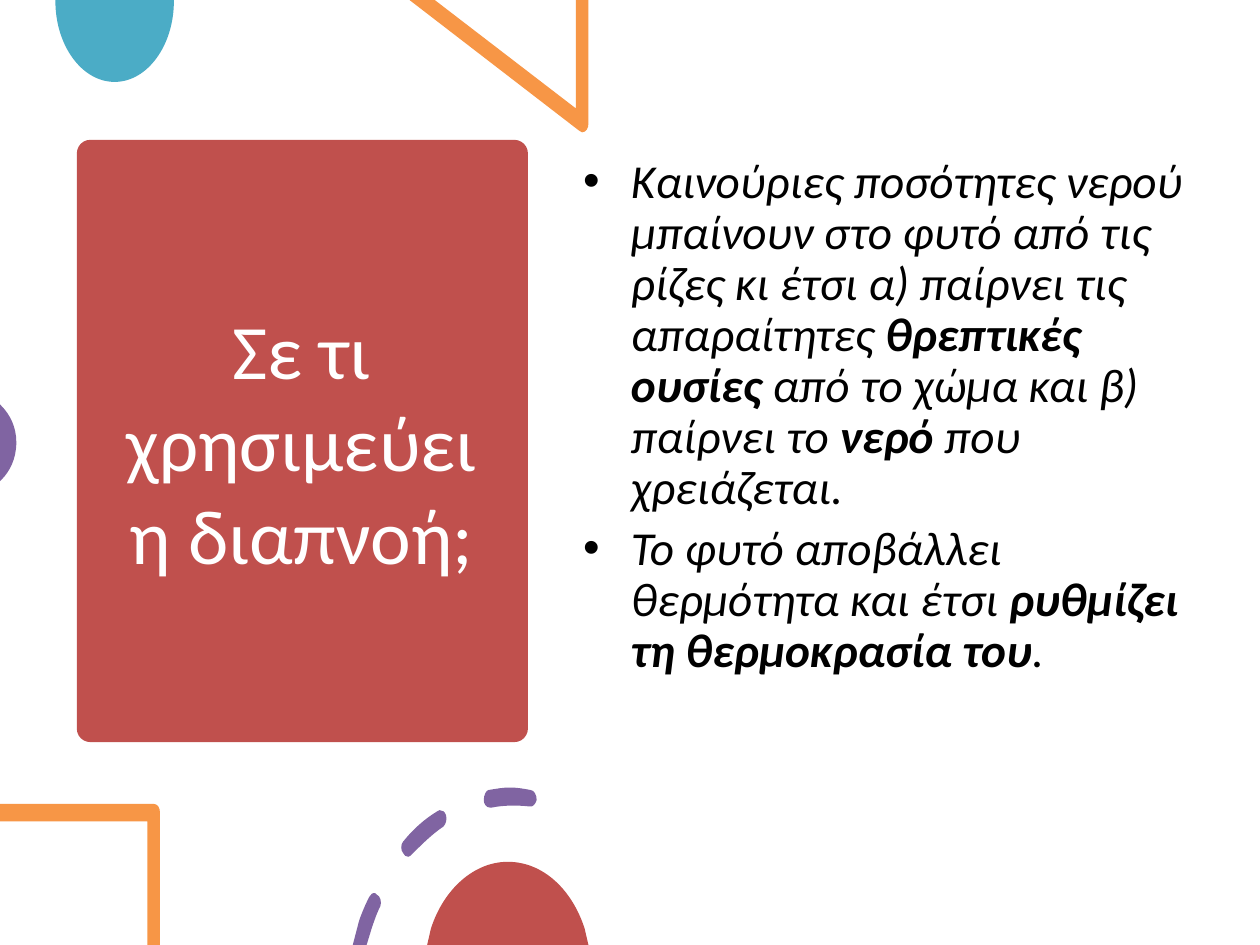
"""Build the slide on what plant transpiration is for."""

from dataclasses import dataclass

from pptx import Presentation
from pptx.dml.color import RGBColor
from pptx.enum.shapes import MSO_SHAPE as Preset
from pptx.enum.text import MSO_ANCHOR as Anchor, PP_ALIGN as Align
from pptx.oxml.ns import qn
from pptx.slide import Slide
from pptx.text.text import _Paragraph as Paragraph
from pptx.util import Cm, Pt
from lxml.etree import SubElement

Step = tuple[float, ...]


@dataclass(frozen=True)
class Theme:
    font: str = "Calibri"
    title_size: int = 44
    body_size: int = 27
    red: str = "C0504D"
    teal: str = "4BACC6"
    orange: str = "F79646"
    purple: str = "8064A2"
    white: str = "FFFFFF"
    black: str = "000000"


@dataclass(frozen=True)
class Area:
    left: float
    top: float
    width: float
    height: float

    def lengths(self) -> list[Cm]:
        return [inch(side) for side in (self.left, self.top, self.width, self.height)]


@dataclass(frozen=True)
class Ornament:
    """Outlines in inches: a pair is a line to a point, six numbers are a curve."""

    color: str
    outlines: list[list[Step]]


@dataclass(frozen=True)
class Phrase:
    text: str
    bold: bool = False


THEME = Theme()
CARD = Area(0.61, 1.11, 3.58, 4.78)
TITLE = Area(0.78, 1.22, 3.23, 4.56)
BODY = Area(4.53, 1.2, 5.06, 4.36)
HANGING = 0.38

DASHES = [
    [(2.98, 7.09), (2.96, 7.08, 2.94, 7.1, 2.93, 7.12), (2.9, 7.18, 2.87, 7.25, 2.85, 7.31),
     (2.8, 7.5), (2.91, 7.5), (2.95, 7.37), (2.97, 7.31, 2.99, 7.25, 3.02, 7.19),
     (3.03, 7.16, 3.02, 7.11, 2.99, 7.1), (2.99, 7.09, 2.98, 7.09, 2.98, 7.09)],
    [(3.49, 6.43), (3.48, 6.43, 3.48, 6.43, 3.47, 6.44), (3.37, 6.5, 3.28, 6.58, 3.2, 6.68),
     (3.18, 6.7, 3.18, 6.75, 3.2, 6.77), (3.21, 6.79, 3.22, 6.8, 3.24, 6.8),
     (3.25, 6.8, 3.26, 6.79, 3.27, 6.78), (3.35, 6.7, 3.43, 6.62, 3.52, 6.56),
     (3.54, 6.54, 3.55, 6.5, 3.54, 6.47), (3.53, 6.44, 3.51, 6.43, 3.49, 6.43)],
    [(4.05, 6.25), (3.99, 6.25, 3.94, 6.26, 3.88, 6.27), (3.86, 6.27, 3.84, 6.31, 3.84, 6.35),
     (3.84, 6.38, 3.86, 6.41, 3.89, 6.41), (3.89, 6.41, 3.9, 6.41, 3.9, 6.41),
     (4, 6.39, 4.1, 6.39, 4.2, 6.4), (4.23, 6.41, 4.25, 6.38, 4.26, 6.35),
     (4.26, 6.31, 4.24, 6.27, 4.21, 6.27), (4.16, 6.26, 4.1, 6.25, 4.05, 6.25)],
]

ORNAMENTS = [
    Ornament(THEME.teal, [[(1.38, 0), (0.44, 0), (0.44, 0.01),
                           (0.44, 0.36, 0.65, 0.65, 0.91, 0.65),
                           (1.17, 0.65, 1.38, 0.36, 1.38, 0.01)]]),
    Ornament(THEME.orange, [[(4.67, 0), (4.57, 0), (4.57, 0.86), (3.45, 0), (3.25, 0),
                             (4.6, 1.04), (4.61, 1.05, 4.61, 1.05, 4.62, 1.05),
                             (4.65, 1.05, 4.67, 1.02, 4.67, 0.98)]]),
    Ornament(THEME.purple, [[(0, 3.21), (0, 3.82), (0.01, 3.81),
                             (0.08, 3.74, 0.13, 3.64, 0.13, 3.51),
                             (0.13, 3.39, 0.08, 3.29, 0.01, 3.22)]]),
    Ornament(THEME.orange, [[(1.22, 6.38), (0, 6.38), (0, 6.52), (1.17, 6.52), (1.17, 7.5),
                             (1.27, 7.5), (1.27, 6.45),
                             (1.27, 6.41, 1.25, 6.38, 1.22, 6.38)]]),
    Ornament(THEME.purple, DASHES),
    Ornament(THEME.red, [[(4.03, 6.84), (3.76, 6.84, 3.52, 7.06, 3.42, 7.37), (3.39, 7.5),
                          (4.67, 7.5), (4.64, 7.37), (4.54, 7.06, 4.31, 6.84, 4.03, 6.84)]]),
]

BULLETS = [
    [Phrase("Καινούριες ποσότητες νερού μπαίνουν στο φυτό από τις ρίζες κι έτσι "
            "α) παίρνει τις απαραίτητες "),
     Phrase("θρεπτικές ουσίες", True),
     Phrase(" από το χώμα και β) παίρνει το "),
     Phrase("νερό", True),
     Phrase(" που χρειάζεται.")],
    [Phrase("Το φυτό αποβάλλει θερμότητα και έτσι"),
     Phrase(" ρυθμίζει τη θερμοκρασία του", True),
     Phrase(".")],
]


def inch(value: float) -> Cm:
    return Cm(value * 2.54)


def paint(shape, color: str) -> None:
    shape.fill.solid()
    shape.fill.fore_color.rgb = RGBColor.from_string(color)
    shape.line.fill.background()
    shape.shadow.inherit = False


def bend(shape, steps: list[Step]) -> None:
    """Turn the straight segments of six-number steps into Bezier curves."""
    segments = list(shape._element.iter(qn("a:lnTo")))
    for segment, step in zip(segments, steps):
        if len(step) == 2:
            continue
        segment.tag = qn("a:cubicBezTo")
        for child in list(segment):
            segment.remove(child)
        for x, y in zip(step[::2], step[1::2]):
            SubElement(segment, qn("a:pt"), x=str(inch(x) - shape.left),
                       y=str(inch(y) - shape.top))


def draw_ornament(page: Slide, ornament: Ornament) -> None:
    ends = [[(inch(step[-2]), inch(step[-1])) for step in outline]
            for outline in ornament.outlines]
    builder = page.shapes.build_freeform(*ends[0][0])
    for index, points in enumerate(ends):
        if index:
            builder.move_to(*points[0])
        builder.add_line_segments(points[1:], close=True)
    shape = builder.convert_to_shape()
    bend(shape, [step for outline in ornament.outlines for step in outline[1:]])
    paint(shape, ornament.color)


def add_text_frame(page: Slide, area: Area, anchor: Anchor):
    frame = page.shapes.add_textbox(*area.lengths()).text_frame
    frame.word_wrap = True
    frame.vertical_anchor = anchor
    return frame


def add_span(para: Paragraph, phrase: Phrase, size: int, color: str, italic: bool) -> None:
    span = para.add_run()
    span.text = phrase.text
    span.font.name = THEME.font
    span.font.size = Pt(size)
    span.font.bold = phrase.bold
    span.font.italic = italic
    span.font.color.rgb = RGBColor.from_string(color)


def format_bullet(para: Paragraph) -> None:
    para.line_spacing = 0.9
    para.space_before = Pt(5.4)
    properties = para._p.get_or_add_pPr()
    properties.set("marL", str(inch(HANGING)))
    properties.set("indent", str(-inch(HANGING)))
    SubElement(properties, qn("a:buFont"), typeface="Arial")
    SubElement(properties, qn("a:buChar"), char="•")


def draw_title(page: Slide) -> None:
    card = page.shapes.add_shape(Preset.ROUNDED_RECTANGLE, *CARD.lengths())
    card.adjustments[0] = 0.03
    paint(card, THEME.red)
    para = add_text_frame(page, TITLE, Anchor.MIDDLE).paragraphs[0]
    para.alignment = Align.CENTER
    add_span(para, Phrase("Σε τι χρησιμεύει η διαπνοή;"), THEME.title_size, THEME.white, False)


def draw_body(page: Slide) -> None:
    frame = add_text_frame(page, BODY, Anchor.TOP)
    for index, phrases in enumerate(BULLETS):
        para = frame.add_paragraph() if index else frame.paragraphs[0]
        format_bullet(para)
        for phrase in phrases:
            add_span(para, phrase, THEME.body_size, THEME.black, True)


def main() -> None:
    deck = Presentation()
    deck.slide_width, deck.slide_height = Cm(25.4), Cm(19.05)
    page = deck.slides.add_slide(deck.slide_layouts[6])
    draw_title(page)
    for ornament in ORNAMENTS:
        draw_ornament(page, ornament)
    draw_body(page)
    deck.save("out.pptx")


if __name__ == "__main__":
    main()
